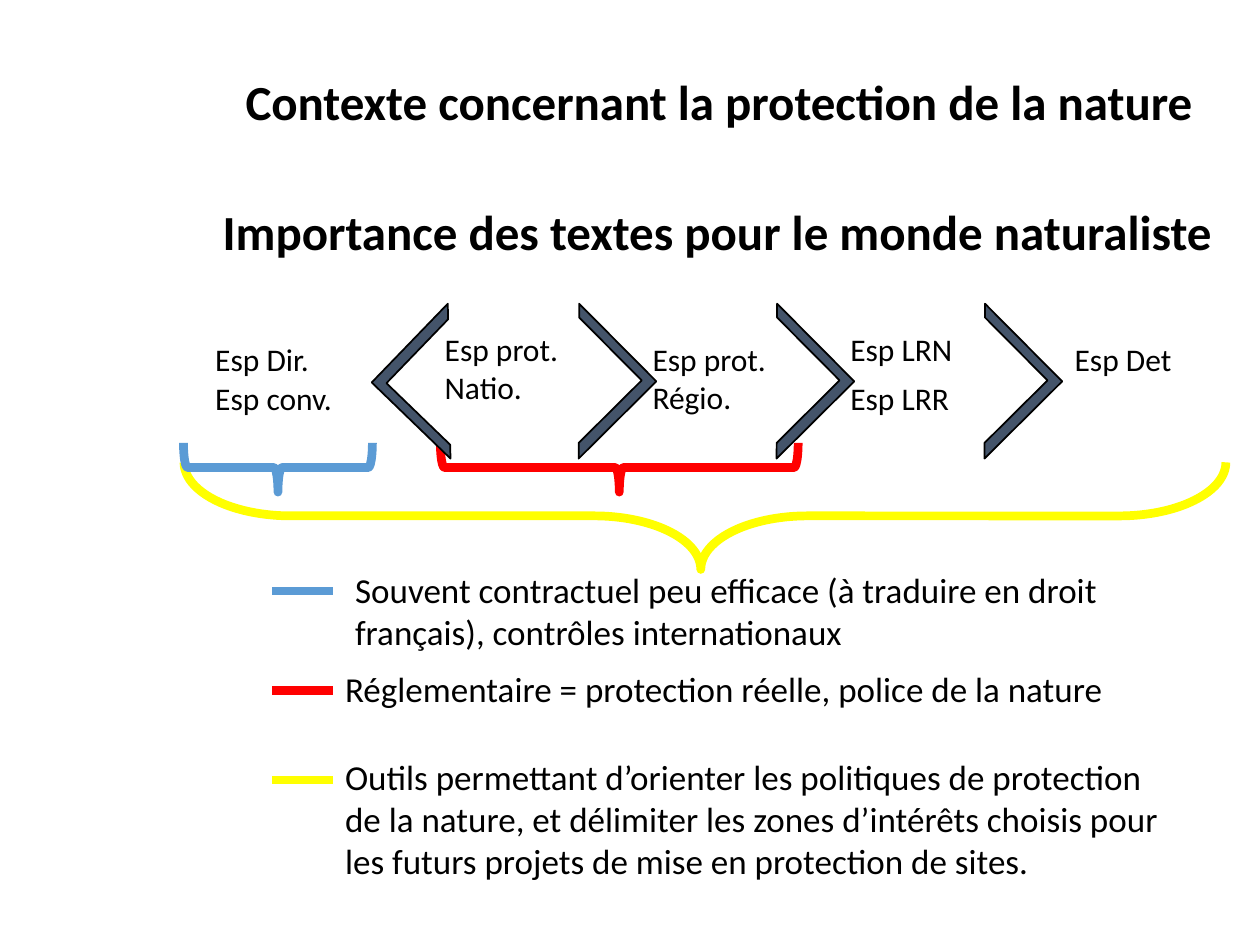
"""Build a slide on the texts that matter for nature protection."""
from lxml.etree import SubElement
from pptx import Presentation
from pptx.dml.color import RGBColor
from pptx.enum.shapes import MSO_CONNECTOR, MSO_SHAPE
from pptx.enum.text import MSO_ANCHOR, PP_ALIGN
from pptx.oxml.ns import qn
from pptx.util import Pt

COLORS = {"text": "000000", "chevron": "44546A", "blue": "5B9BD5",
          "red": "FF0000", "yellow": "FFFF00"}
FONT = "Calibri"

TITLES = [
    ("Contexte concernant la protection de la nature", 133.2, 37.4, 586.8, PP_ALIGN.LEFT),
    ("Importance des textes pour le monde naturaliste", 99.4, 111.6, 620.6, PP_ALIGN.CENTER),
]
SPECIES = [
    ("Esp Dir.", 115.9, 190.8, 113),
    ("Esp conv.", 115.9, 213.1, 113),
    ("Esp prot. Natio.", 247, 185, 107.3),
    ("Esp prot. Régio.", 365.8, 190.8, 113),
    ("Esp LRN", 478.8, 185, 113),
    ("Esp LRR", 478.8, 213.1, 113),
    ("Esp Det", 607, 190.8, 113),
]
BRACES = [
    ("yellow", 105.1, 264.2, 595.4, 61.2, (0.996, 0.504)),
    ("red", 251.6, 253.1, 204.5, 28.1, (0.083, 0.5)),
    ("blue", 104.8, 253.1, 108, 28.1, (0.083, 0.5)),
]
CHEVRONS = [(225.4, 314), (299.5, 135.2), (412.6, 135.2), (531.4, 135.2)]
CHEVRON_TOP, CHEVRON_SIZE = 186.5, 62.6
LEGEND = [
    ("blue", 337.7, 195.8, 321.1,
     "Souvent contractuel peu efficace (à traduire en droit français), contrôles internationaux"),
    ("red", 394.6, 190.1, 378,
     "Réglementaire = protection réelle, police de la nature"),
    ("yellow", 445.7, 190.1, 428.4,
     "Outils permettant d’orienter les politiques de protection de la nature, et délimiter "
     "les zones d’intérêts choisis pour les futurs projets de mise en protection de sites."),
]
KEY_LEFT, KEY_RIGHT, LEGEND_WIDTH = 155.5, 190.1, 481.7
LINE_WIDTH = 5


def color(name):
    return RGBColor.from_string(COLORS[name])


def add_text(slide, text, left, top, width, size, bold=False, align=PP_ALIGN.LEFT):
    box = slide.shapes.add_textbox(Pt(left), Pt(top), Pt(width), Pt(size * 1.22 + 7.2))
    frame = box.text_frame
    frame.word_wrap = True
    frame.vertical_anchor = MSO_ANCHOR.TOP
    paragraph = frame.paragraphs[0]
    paragraph.text = text
    paragraph.alignment = align
    font = paragraph.font
    font.name, font.size, font.bold = FONT, Pt(size), bold
    font.color.rgb = color("text")


def add_outlined(slide, kind, left, top, width, height, rotation, adjustments, line, weight):
    shape = slide.shapes.add_shape(kind, Pt(left), Pt(top), Pt(width), Pt(height))
    shape.shadow.inherit = False
    shape.rotation = rotation
    for index, value in enumerate(adjustments):
        shape.adjustments[index] = value
    shape.line.color.rgb = color(line)
    shape.line.width = Pt(weight)
    return shape


def add_brace(slide, name, left, top, width, height, adjustments):
    shift = (width - height) / 2
    brace = add_outlined(slide, MSO_SHAPE.RIGHT_BRACE, left + shift, top - shift,
                         height, width, 90, adjustments, name, LINE_WIDTH)
    brace.fill.background()


def add_chevron(slide, left, rotation):
    chevron = add_outlined(slide, MSO_SHAPE.HALF_FRAME, left, CHEVRON_TOP, CHEVRON_SIZE,
                           CHEVRON_SIZE, rotation, (0.101, 0.089), "text", 1)
    chevron.fill.solid()
    chevron.fill.fore_color.rgb = color("chevron")


def add_key(slide, name, y):
    key = slide.shapes.add_connector(MSO_CONNECTOR.STRAIGHT, Pt(KEY_LEFT), Pt(y),
                                     Pt(KEY_RIGHT), Pt(y))
    key.line.color.rgb = color(name)
    key.line.width = Pt(LINE_WIDTH)
    SubElement(key._element.spPr, qn("a:effectLst"))


def main():
    presentation = Presentation()
    presentation.slide_width, presentation.slide_height = Pt(720), Pt(540)
    slide = presentation.slides.add_slide(presentation.slide_layouts[6])
    for text, left, top, width, align in TITLES:
        add_text(slide, text, left, top, width, 28, True, align)
    for text, left, top, width in SPECIES:
        add_text(slide, text, left, top, width, 18)
    for brace in BRACES:
        add_brace(slide, *brace)
    for left, rotation in CHEVRONS:
        add_chevron(slide, left, rotation)
    for name, y, left, top, text in LEGEND:
        add_key(slide, name, y)
        add_text(slide, text, left, top, LEGEND_WIDTH, 20)
    presentation.save("out.pptx")


if __name__ == "__main__":
    main()
